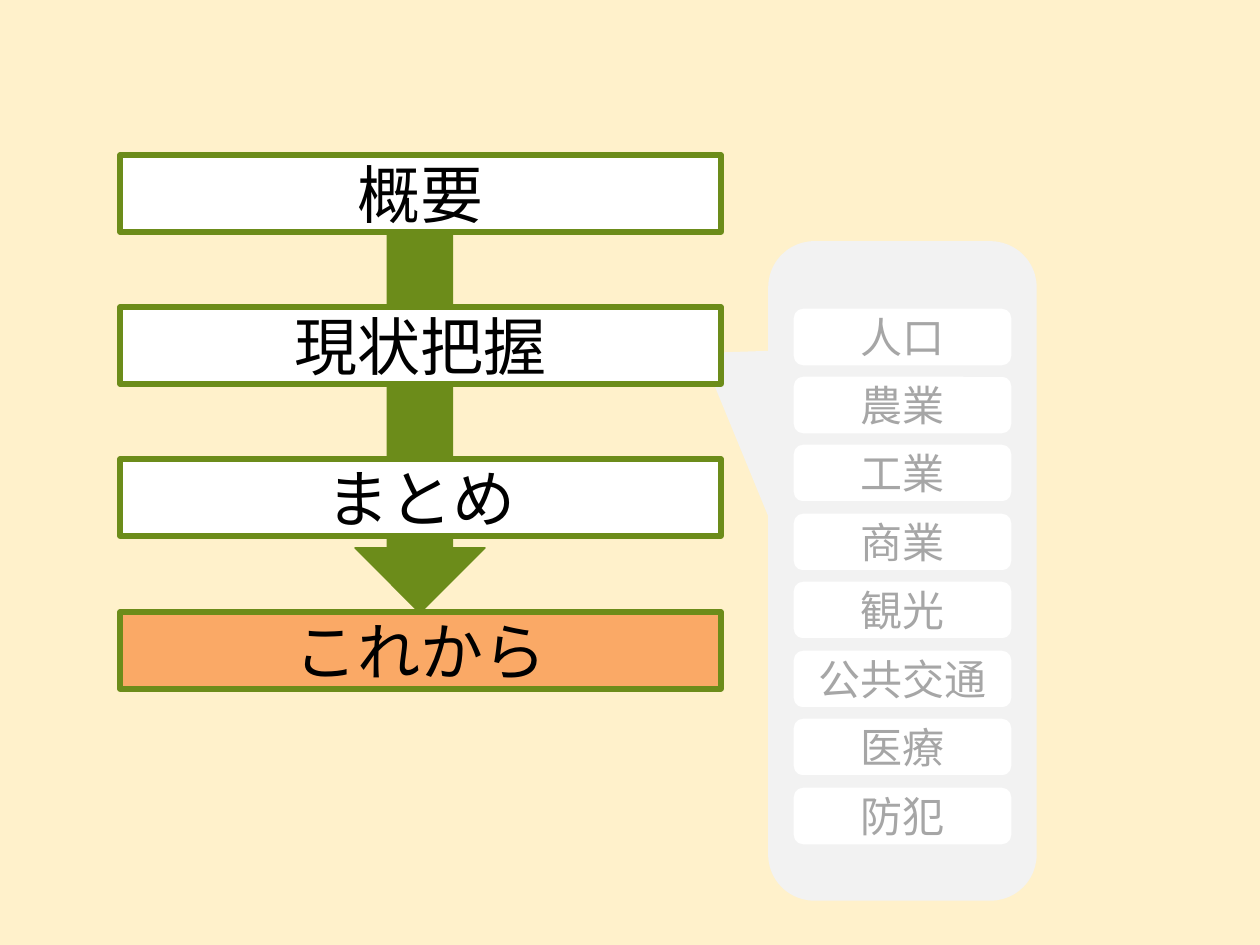
from dataclasses import dataclass

from pptx import Presentation
from pptx import util as u
from pptx.dml.color import RGBColor
from pptx.enum import shapes, text

PX = 914400 / 126
WIDTH, HEIGHT = 1260, 945
KIND = shapes.MSO_SHAPE


@dataclass(frozen=True)
class Theme:
    font: str = "Calibri"
    background: str = "FFF1CB"
    panel: str = "F2F2F2"
    flow: str = "6C8C1A"
    box: str = "FFFFFF"
    current: str = "FAA966"
    step_text: str = "000000"
    topic_text: str = "A6A6A6"
    step_size: int = 36
    topic_size: int = 24
    thin: float = 0.85
    thick: float = 3


def emu(px):
    return u.Emu(round(px * PX))


def rgb(code):
    return RGBColor.from_string(code)


def spread(first, last, count):
    """Whole-pixel positions at equal steps from first to last."""
    return [first + (last - first) * i // (count - 1) for i in range(count)]


class Board:
    """Draws the agenda's elements on one slide in one theme."""

    def __init__(self, slide, theme):
        self.slide = slide
        self.theme = theme
        background = slide.background.fill
        background.solid()
        background.fore_color.rgb = rgb(theme.background)

    def block(self, kind, box, fill, line, width):
        block = self.slide.shapes.add_shape(kind, *map(emu, box))
        block.shadow.inherit = False
        block.fill.solid()
        block.fill.fore_color.rgb = rgb(fill)
        block.line.color.rgb = rgb(line)
        block.line.width = u.Pt(width)
        return block

    def label(self, block, wording, size, color):
        frame = block.text_frame
        frame.word_wrap = True
        frame.vertical_anchor = text.MSO_ANCHOR.MIDDLE
        paragraph = frame.paragraphs[0]
        paragraph.text = wording
        paragraph.alignment = text.PP_ALIGN.CENTER
        paragraph.font.name = self.theme.font
        paragraph.font.size = u.Pt(size)
        paragraph.font.color.rgb = rgb(color)

    def callout(self, box, adjustments):
        t = self.theme
        callout = self.block(KIND.ROUNDED_RECTANGULAR_CALLOUT, box, t.panel, t.panel, t.thin)
        for i, value in enumerate(adjustments):
            callout.adjustments[i] = value

    def arrow(self, box):
        t = self.theme
        self.block(KIND.DOWN_ARROW, box, t.flow, t.flow, t.thin)

    def step(self, wording, box, current):
        t = self.theme
        fill = t.current if current else t.box
        step = self.block(KIND.RECTANGLE, box, fill, t.flow, t.thick)
        self.label(step, wording, t.step_size, t.step_text)

    def topic(self, wording, box):
        t = self.theme
        topic = self.block(KIND.ROUNDED_RECTANGLE, box, t.box, t.panel, t.thin)
        self.label(topic, wording, t.topic_size, t.topic_text)


def main():
    steps = ["概要", "現状把握", "まとめ", "これから"]
    topics = ["人口", "農業", "工業", "商業", "観光", "公共交通", "医療", "防犯"]
    current_step = "これから"

    deck = Presentation()
    deck.slide_width, deck.slide_height = emu(WIDTH), emu(HEIGHT)
    blank_layout = deck.slide_layouts[6]
    board = Board(deck.slides.add_slide(blank_layout), Theme())

    board.callout((769, 242, 267, 658), (-0.75, -0.33, 0.17))
    board.arrow((355, 222, 130, 391))
    for wording, top in zip(steps, spread(155, 612, len(steps))):
        board.step(wording, (120, top, 601, 77), wording == current_step)
    for wording, top in zip(topics, spread(308, 787, len(topics))):
        board.topic(wording, (793, top, 219, 58))

    deck.save("out.pptx")


if __name__ == "__main__":
    main()
